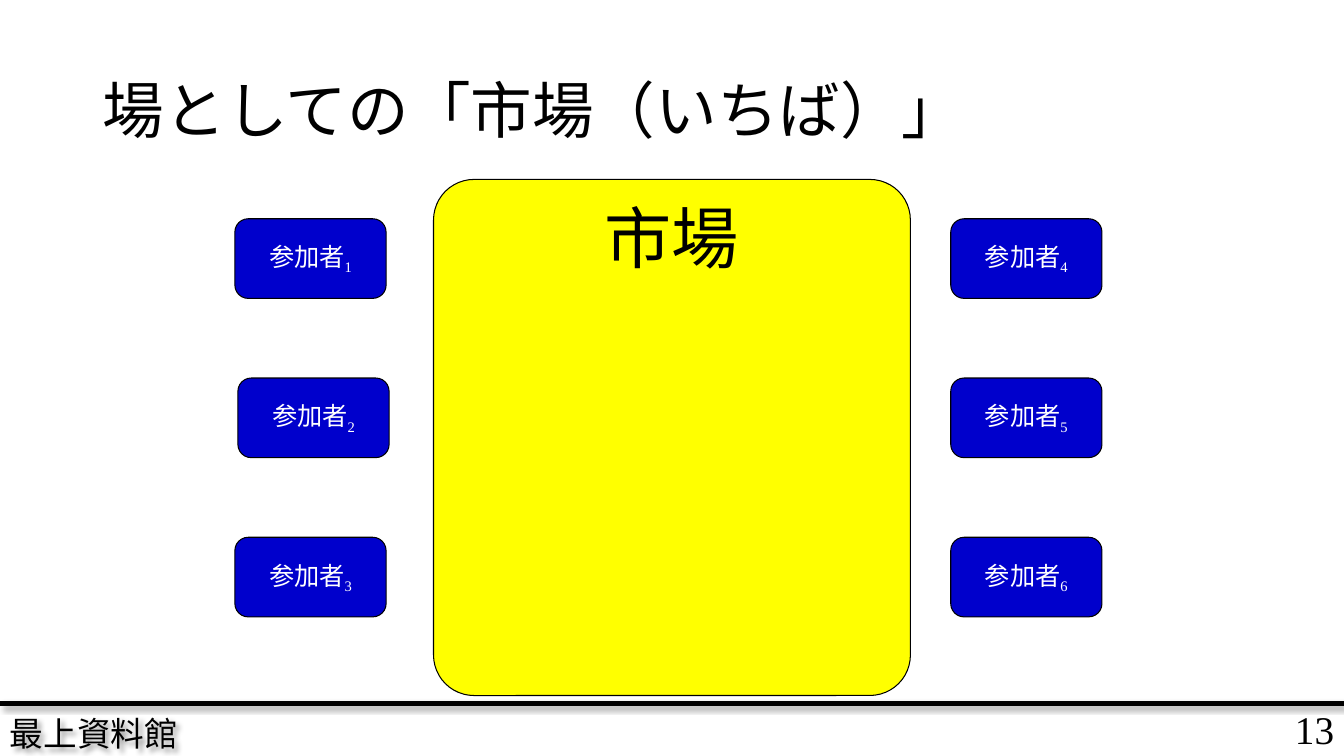
"""Build the slide showing a marketplace with six participants around it."""
from lxml import etree
from pptx import Presentation
from pptx.dml.color import RGBColor
from pptx.enum.shapes import MSO_CONNECTOR, MSO_SHAPE
from pptx.enum.text import MSO_ANCHOR, MSO_AUTO_SIZE, PP_ALIGN
from pptx.oxml import parse_xml
from pptx.oxml.ns import nsdecls, qn
from pptx.util import Inches, Pt

BLACK = RGBColor(0x00, 0x00, 0x00)
WHITE = RGBColor(0xFF, 0xFF, 0xFF)
YELLOW = RGBColor(0xFF, 0xFF, 0x00)
BLUE = RGBColor(0x00, 0x00, 0xCC)
SERIF, GOTHIC = "Times New Roman", "Noto Sans CJK JP"
LEFT, CENTER, RIGHT = PP_ALIGN.LEFT, PP_ALIGN.CENTER, PP_ALIGN.RIGHT
TOP, MIDDLE = MSO_ANCHOR.TOP, MSO_ANCHOR.MIDDLE
ROUNDED = MSO_SHAPE.ROUNDED_RECTANGLE
SHADOW = (
    f'<a:effectLst {nsdecls("a")}>'
    '<a:outerShdw blurRad="50800" dist="38100" dir="2700000" algn="tl" rotWithShape="0">'
    '<a:srgbClr val="000000"><a:alpha val="40000"/></a:srgbClr>'
    '</a:outerShdw></a:effectLst>'
)


def write(sp, text, size, color=BLACK, font=SERIF, align=LEFT, anchor=MIDDLE,
          wrap=True, subscript=""):
    tf = sp.text_frame
    tf.auto_size = MSO_AUTO_SIZE.NONE
    tf.word_wrap = wrap
    tf.vertical_anchor = anchor
    p = tf.paragraphs[0]
    p.alignment = align
    for part in filter(None, (text, subscript)):
        r = p.add_run()
        r.text = part
        r.font.size = Pt(size)
        r.font.name = font
        r.font.color.rgb = color
        etree.SubElement(r.font._element, qn("a:ea"), typeface=GOTHIC)
    if subscript:
        r.font._element.set("baseline", "-25000")
    return p


def add_box(x, y, w, h, fill, corner):
    sp = s.shapes.add_shape(ROUNDED, Inches(x), Inches(y), Inches(w), Inches(h))
    sp.adjustments[0] = corner
    sp.shadow.inherit = False
    sp.fill.solid()
    sp.fill.fore_color.rgb = fill
    sp.line.color.rgb = BLACK
    sp.line.width = Pt(0.75)
    return sp


prs = Presentation()
prs.slide_width, prs.slide_height = Inches(13.33), Inches(7.5)
s = prs.slides.add_slide(prs.slide_layouts[5])

number = s.shapes.add_textbox(Inches(11.55), Inches(6.98), Inches(1.78), Inches(0.51))
write(number, "13", 28, align=RIGHT)

footer = s.shapes.add_textbox(Inches(0), Inches(7.05), Inches(3.6), Inches(0.45))
write(footer, "最上資料館", 24)
footer._element.spPr.append(parse_xml(SHADOW))

rule = s.shapes.add_connector(
    MSO_CONNECTOR.STRAIGHT, Inches(0), Inches(6.98), Inches(13.33), Inches(6.98))
rule.line.color.rgb = BLACK
rule.line.width = Pt(3)
rule._element.spPr.append(parse_xml(SHADOW))

title = s.shapes.title
title.left, title.top = Inches(0.92), Inches(0.4)
title.width, title.height = Inches(11.5), Inches(1.45)
p = write(title, "場としての「市場（いちば）」", 44, font=GOTHIC)
p.line_spacing = 0.9

market = add_box(4.3, 1.78, 4.73, 5.12, YELLOW, 0.085)
write(market, "市場", 48, align=CENTER, anchor=TOP, wrap=False)

columns = [(2.33, 2.36, 2.33), (9.43, 9.43, 9.43)]
for col, lefts in enumerate(columns):
    for row, x in enumerate(lefts):
        participant = add_box(x, 2.17 + 1.58 * row, 1.5, 0.79, BLUE, 0.167)
        write(participant, "参加者", 18, color=WHITE, align=CENTER, wrap=False,
              subscript=str(3 * col + row + 1))

prs.save("out.pptx")
